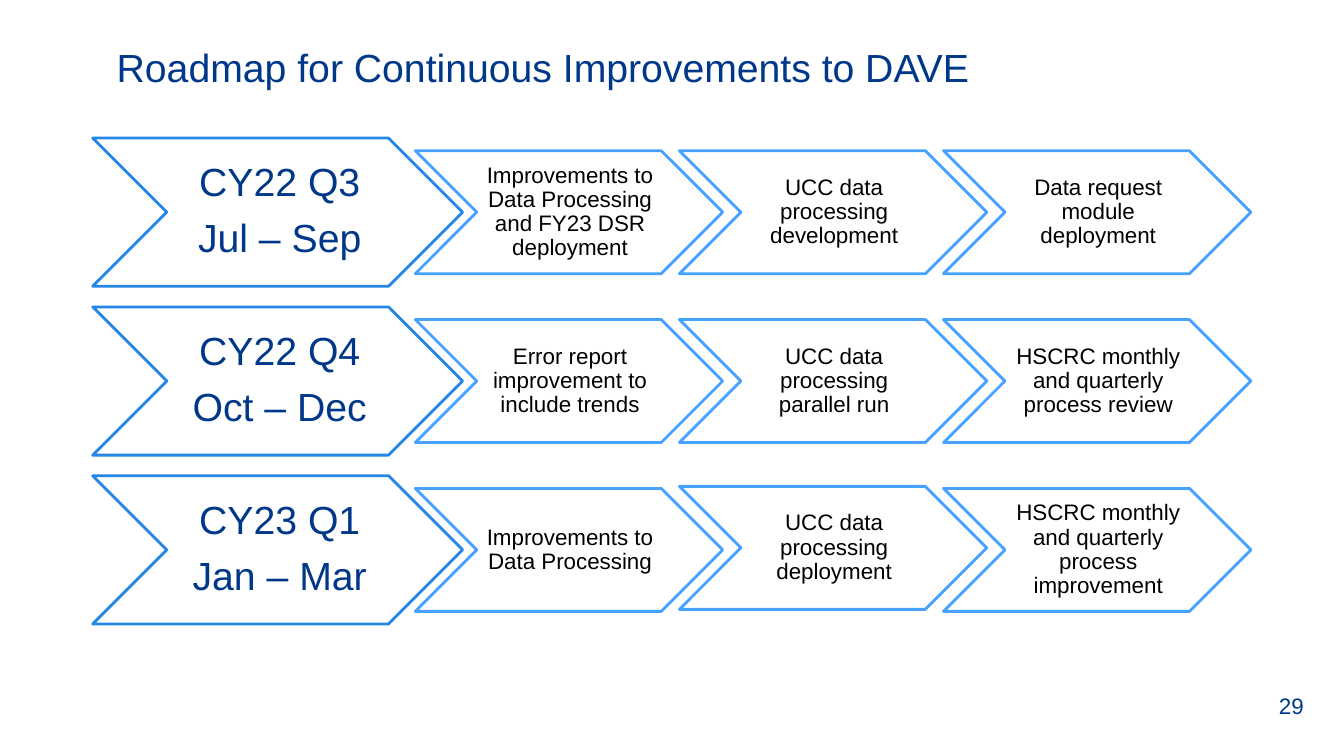
from pptx import Presentation
from pptx.dml.color import RGBColor
from pptx.enum.shapes import MSO_SHAPE
from pptx.enum.text import MSO_ANCHOR, PP_ALIGN
from pptx.oxml.ns import qn
from pptx.util import Pt
from lxml.etree import SubElement

TITLE = "Roadmap for Continuous Improvements to DAVE"
PAGE_NUMBER = "29"
ROADMAP = [
    (["CY22 Q3", "Jul – Sep"],
     ["Improvements to Data Processing and FY23 DSR deployment",
      "UCC data processing development",
      "Data request module deployment"]),
    (["CY22 Q4", "Oct – Dec"],
     ["Error report improvement to include trends",
      "UCC data processing parallel run",
      "HSCRC monthly and quarterly process review"]),
    (["CY23 Q1", "Jan – Mar"],
     ["Improvements to Data Processing",
      "UCC data processing deployment",
      "HSCRC monthly and quarterly process improvement"]),
]
COLORS = {"navy": "003889", "black": "000000", "white": "FFFFFF",
          "quarter": "2686E6", "step": "2D95FF"}
QUARTER = {"left": 66.25, "top": 98.65, "width": 264.25, "height": 105.85}
STEP = {"left": 296.65, "width": 219.6, "height": 87.85}
ROW_PITCH, STEP_PITCH = 120.6, 188.65
STEP_NUDGES = {(2, 1): -1.45}


def write_text(shape, lines, size, color, insets=(7.2, 3.6, 7.2, 3.6),
               align=PP_ALIGN.LEFT, anchor=MSO_ANCHOR.TOP, spacing=1.0, gap=0):
    """Fill a shape with paragraphs in one format."""
    frame = shape.text_frame
    frame.word_wrap = True
    frame.vertical_anchor = anchor
    (frame.margin_left, frame.margin_top,
     frame.margin_right, frame.margin_bottom) = map(Pt, insets)
    for index, line in enumerate(lines):
        para = frame.add_paragraph() if index else frame.paragraphs[0]
        para.alignment = align
        para.line_spacing = spacing
        if index:
            para.space_before = Pt(gap)
        span = para.add_run()
        span.text = line
        span.font.name = "Arial"
        span.font.size = Pt(size)
        span.font.color.rgb = RGBColor.from_string(COLORS[color])


def add_text(page, text, left, top, width, height, **style):
    """Add a text box holding one line."""
    box = page.shapes.add_textbox(Pt(left), Pt(top), Pt(width), Pt(height))
    write_text(box, [text], **style)


def add_chevron(page, lines, left, top, width, height, outline, opacity=100, **style):
    """Add an outlined chevron with centred text."""
    chevron = page.shapes.add_shape(
        MSO_SHAPE.CHEVRON, Pt(left), Pt(top), Pt(width), Pt(height))
    chevron.adjustments[0] = 0.5
    chevron.shadow.inherit = False
    chevron.fill.solid()
    chevron.fill.fore_color.rgb = RGBColor.from_string(COLORS["white"])
    chevron.line.color.rgb = RGBColor.from_string(COLORS[outline])
    chevron.line.width = Pt(2)
    if opacity < 100:
        for color in chevron._element.spPr.iter(qn("a:srgbClr")):
            SubElement(color, qn("a:alpha"), val=str(opacity * 1000))
    write_text(chevron, lines, align=PP_ALIGN.CENTER,
               anchor=MSO_ANCHOR.MIDDLE, spacing=0.9, **style)


def main():
    """Build and save the roadmap slide."""
    deck = Presentation()
    deck.slide_width, deck.slide_height = Pt(960), Pt(540)
    page = deck.slides.add_slide(deck.slide_layouts[6])
    add_text(page, PAGE_NUMBER, 906.5, 489.6, 45.4, 28.8,
             size=16, color="navy", anchor=MSO_ANCHOR.MIDDLE)
    add_text(page, TITLE, 76.3, 27.4, 828, 47.5, size=28, color="navy")
    inset = (QUARTER["height"] - STEP["height"]) / 2
    for row, (quarter, steps) in enumerate(ROADMAP):
        top = QUARTER["top"] + row * ROW_PITCH
        add_chevron(page, quarter, **{**QUARTER, "top": top}, outline="quarter",
                    size=28, color="navy", insets=(2.9, 1.45, 0, 1.45), gap=9.8)
        for column, step in enumerate(steps):
            place = {**STEP, "left": STEP["left"] + column * STEP_PITCH,
                     "top": top + inset + STEP_NUDGES.get((row, column), 0)}
            add_chevron(page, [step], **place, outline="step", opacity=87,
                        size=16, color="black", insets=(1.45, 0.7, 0, 0.7))
    deck.save("out.pptx")


if __name__ == "__main__":
    main()
